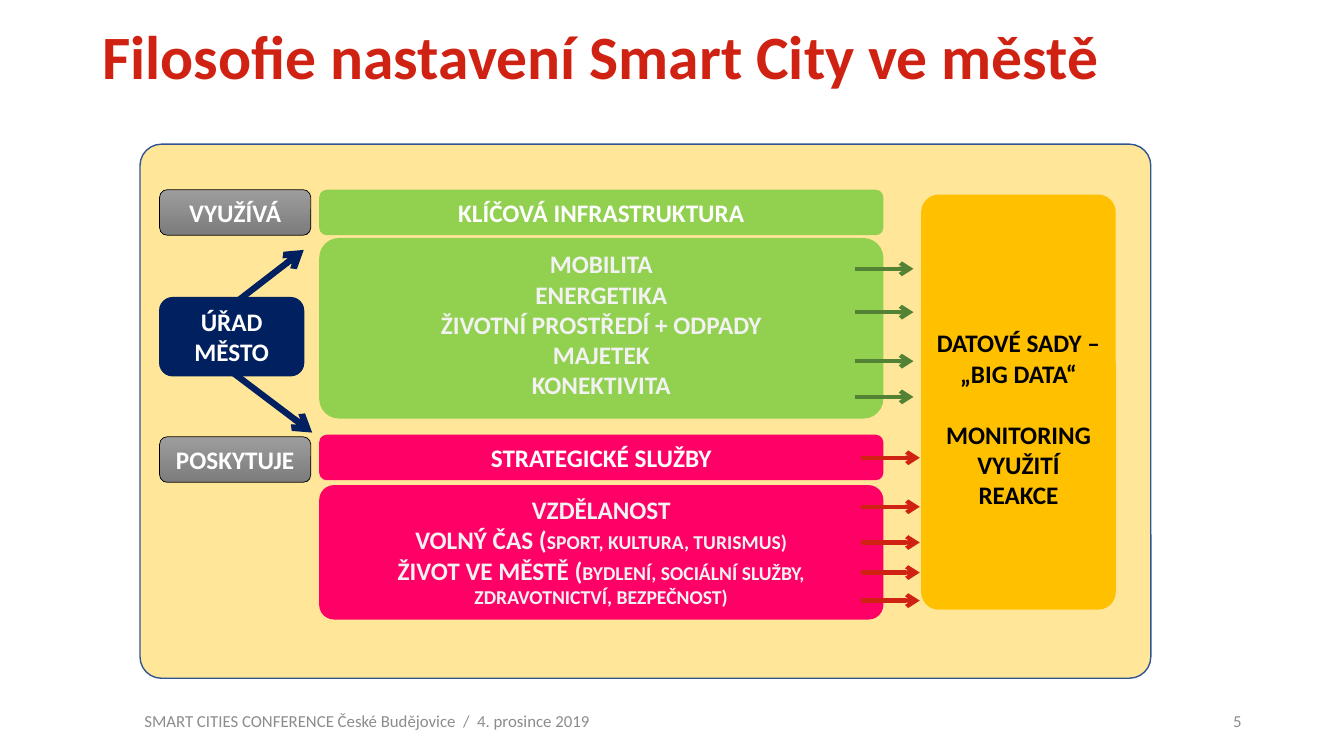
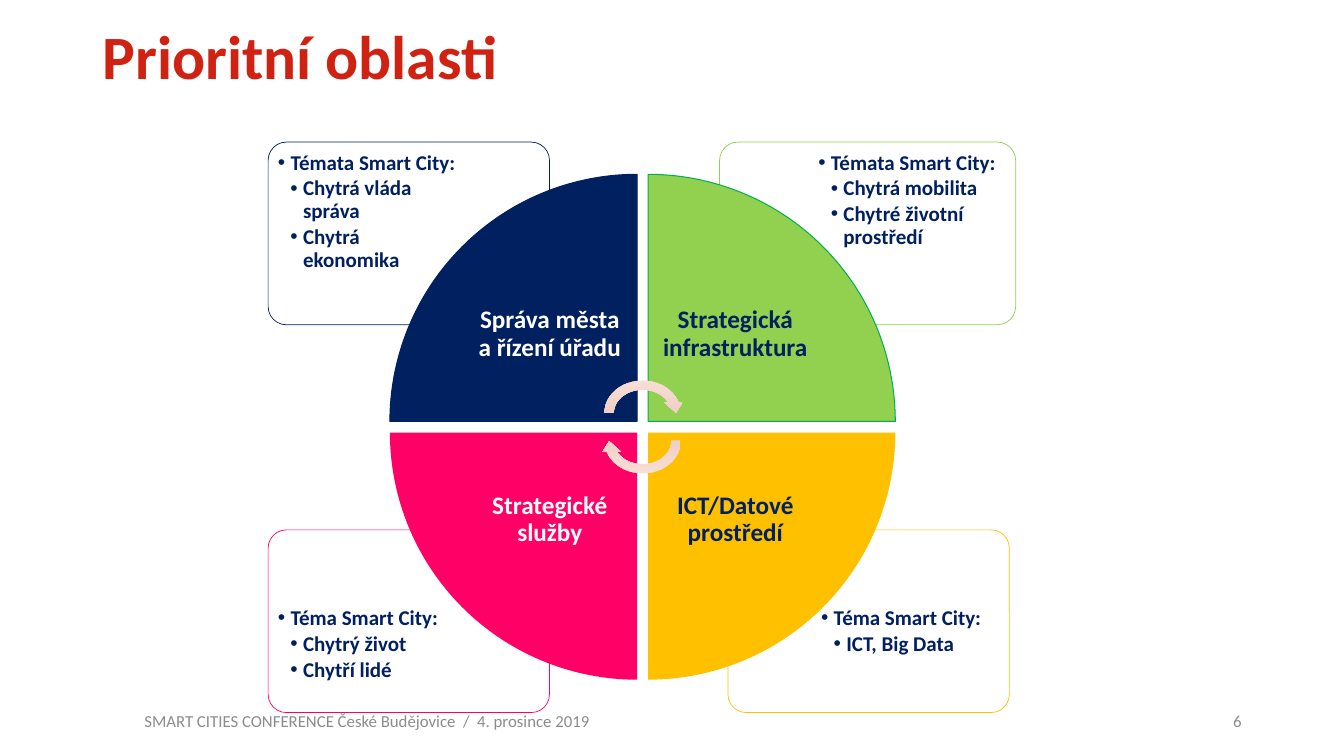
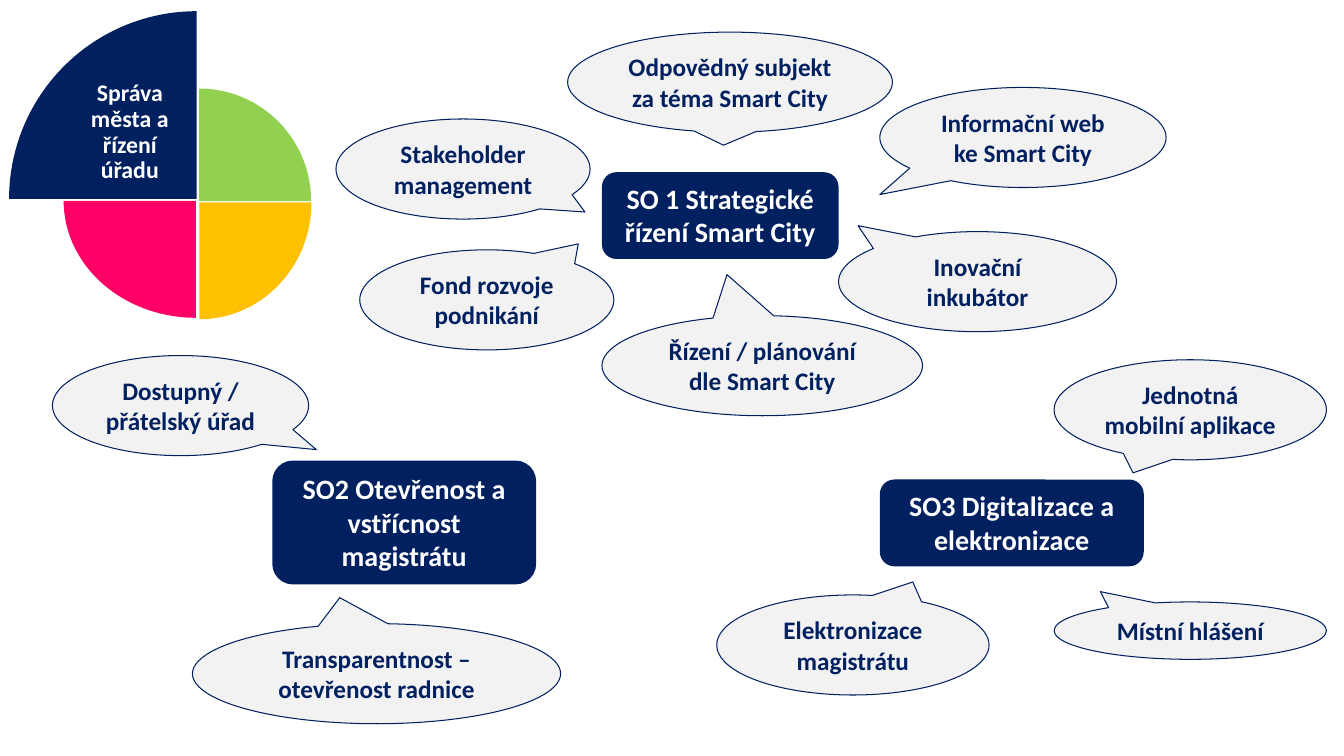
from dataclasses import dataclass
from lxml import etree
from pptx import Presentation
from pptx.dml.color import RGBColor
from pptx.enum.shapes import MSO_CONNECTOR, MSO_SHAPE
from pptx.enum.text import MSO_ANCHOR, MSO_AUTO_SIZE, PP_ALIGN
from pptx.oxml.ns import qn
from pptx.util import Pt

ROUND = MSO_SHAPE.ROUNDED_RECTANGLE
RECT = MSO_SHAPE.RECTANGLE
WEDGE = MSO_SHAPE.PIE_WEDGE
BUBBLE = MSO_SHAPE.OVAL_CALLOUT
CYCLE = MSO_SHAPE.CIRCULAR_ARROW
STRAIGHT = MSO_CONNECTOR.STRAIGHT
LEFT, MID, RIGHT = PP_ALIGN.LEFT, PP_ALIGN.CENTER, PP_ALIGN.RIGHT
TOP, CENTER = MSO_ANCHOR.TOP, MSO_ANCHOR.MIDDLE


@dataclass(frozen=True)
class Theme:
    font: str = "Calibri"
    red: str = "D02213"
    grey: str = "8C8C8C"
    navy: str = "002060"
    green: str = "92D050"
    leaf: str = "00B050"
    moss: str = "548235"
    pink: str = "FF0066"
    gold: str = "FFC000"
    cream: str = "FFE699"
    blue: str = "325491"
    pale: str = "F2F2F2"
    white: str = "FFFFFF"
    black: str = "000000"
    steel: tuple = ("9D9D9D", "7C7C7C")
    peach: tuple = ("FAE0D8", "E2BCB1")
    title: int = 44
    goal: int = 20
    body: int = 18
    label: int = 17
    list: int = 15
    small: int = 14
    foot: int = 12


T = Theme()

FOOTER = "SMART CITIES CONFERENCE České Budějovice  /  4. prosince 2019"

BANDS = [
    (135.5, 32.5, None, T.green, T.white, ["KLÍČOVÁ INFRASTRUKTURA"]),
    (170, 129, 0.11, T.green, T.pale,
     ["MOBILITA", "ENERGETIKA", "ŽIVOTNÍ PROSTŘEDÍ + ODPADY", "MAJETEK", "KONEKTIVITA"]),
    (310.5, 32.5, None, T.pink, T.white, ["STRATEGICKÉ SLUŽBY"]),
    (346.5, 96, 0.11, T.pink, T.pale,
     ["VZDĚLANOST",
      [("VOLNÝ ČAS (", T.body), ("SPORT, KULTURA, TURISMUS)", T.small)],
      [("ŽIVOT VE MĚSTĚ (", T.body),
       ("BYDLENÍ, SOCIÁLNÍ SLUŽBY, ZDRAVOTNICTVÍ, BEZPEČNOST)", T.small)]]),
]
ROLES = [(135.5, "VYUŽÍVÁ"), (312, "POSKYTUJE")]
DATA = ["DATOVÉ SADY – „BIG DATA“", "MONITORING", "VYUŽITÍ", "REAKCE"]
FLOWS = [
    (610.5, T.moss, [192, 223, 258, 283.5]),
    (615, T.red, [327, 362, 387.5, 409, 429]),
]

AREAS = [
    {"name": "Správa města a řízení úřadu", "col": 0, "row": 0, "turn": 0,
     "fill": T.navy, "edge": T.navy, "ink": T.white,
     "panel": (191.5, 201), "list": (194.5, 135.5),
     "head": "Témata Smart City:", "items": ["Chytrá vláda správa", "Chytrá ekonomika"]},
    {"name": "Strategická infrastruktura", "col": 1, "row": 0, "turn": 90,
     "fill": T.green, "edge": T.leaf, "ink": T.navy,
     "panel": (514, 211.5), "list": (580.5, 142.5),
     "head": "Témata Smart City:", "items": ["Chytrá mobilita", "Chytré životní prostředí"]},
    {"name": "Strategické služby", "col": 0, "row": 1, "turn": 270,
     "fill": T.pink, "edge": None, "ink": T.white,
     "panel": (191.5, 201), "list": (194.5, 135.5),
     "head": "Téma Smart City:", "items": ["Chytrý život", "Chytří lidé"]},
    {"name": "ICT/Datové prostředí", "col": 1, "row": 1, "turn": 180,
     "fill": T.gold, "edge": None, "ink": T.navy,
     "panel": (520, 201), "list": (582.5, 135.5),
     "head": "Téma Smart City:", "items": ["ICT, Big Data"]},
]

SLICES = [
    ((6.5, 8, 134, 134), 0, T.navy),
    ((142, 63.5, 80.5, 80), 90, T.green),
    ((142.5, 144.5, 80, 83.5), 180, T.gold),
    ((51, 138, 83.5, 94.5), 270, T.pink),
]
GOALS = [
    ((430, 123, 169, 62), "SO 1 Strategické řízení Smart City"),
    ((194.5, 329, 188.5, 88.5), "SO2 Otevřenost a vstřícnost magistrátu"),
    ((628.5, 342.5, 188.5, 62), "SO3 Digitalizace a elektronizace"),
]
IDEAS = [
    (628.5, 62.5, 204.5, 71.5, -0.5, 0.57, "Informační web ke Smart City"),
    (599, 165.5, 198.5, 71.5, -0.43, -0.56, "Inovační inkubátor"),
    (137.5, 445.5, 263, 71.5, -0.1, -0.76, "Transparentnost – otevřenost radnice"),
    (37.5, 254, 183, 71.5, 0.53, 0.44, "Dostupný / přátelský úřad"),
    (753, 257, 194.5, 71.5, -0.21, 0.63, "Jednotná mobilní aplikace"),
    (753, 430, 194.5, 41, -0.33, -0.68, "Místní hlášení"),
    (405.5, 23, 232, 71.5, -0.02, 0.63, "Odpovědný subjekt za téma Smart City"),
    (240, 85, 181.5, 71.5, 0.48, 0.43, "Stakeholder management"),
    (257, 178.5, 181.5, 71.5, 0.36, -0.56, "Fond rozvoje podnikání"),
    (430, 225.5, 229, 71.5, -0.11, -0.91, "Řízení / plánování dle Smart City"),
    (512, 425, 194.5, 71.5, 0.22, -0.63, "Elektronizace magistrátu"),
]


def rgb(code):
    return RGBColor.from_string(code)


def points(box):
    return [Pt(n) for n in box]


def place(shape, box):
    shape.left, shape.top, shape.width, shape.height = points(box)


def write(shape, paras, size, ink, align=MID, bold=True, anchor=TOP, inset=None, tight=False):
    frame = shape.text_frame
    frame.word_wrap = True
    frame.auto_size = MSO_AUTO_SIZE.NONE
    frame.vertical_anchor = anchor
    if inset is not None:
        frame.margin_left = frame.margin_right = Pt(inset)
        frame.margin_top = frame.margin_bottom = Pt(inset)
    for i, runs in enumerate(paras):
        para = frame.paragraphs[0] if i == 0 else frame.add_paragraph()
        para.alignment = align
        if tight:
            para.line_spacing = 0.9
        for text, pts in [(runs, size)] if isinstance(runs, str) else runs:
            run = para.add_run()
            run.text = text
            font = run.font
            font.name, font.size, font.bold = T.font, Pt(pts), bold
            font.color.rgb = rgb(ink)
    return frame


def draw(slide, kind, box, fill, edge=None, width=0.75, adjust=(), turn=0):
    shape = slide.shapes.add_shape(kind, *points(box))
    shape.shadow.inherit = False
    shape.rotation = turn
    for i, value in enumerate(adjust):
        shape.adjustments[i] = value
    if isinstance(fill, tuple):
        shape.fill.gradient()
        shape.fill.gradient_angle = 270
        for stop, code in zip(shape.fill.gradient_stops, fill):
            stop.color.rgb = rgb(code)
    else:
        shape.fill.solid()
        shape.fill.fore_color.rgb = rgb(fill)
    if edge:
        shape.line.color.rgb = rgb(edge)
        shape.line.width = Pt(width)
    else:
        shape.line.fill.background()
    return shape


def arrow(slide, ends, ink, width):
    line = slide.shapes.add_connector(STRAIGHT, *points(ends))
    line.line.color.rgb = rgb(ink)
    line.line.width = Pt(width)
    props = line._element.spPr
    etree.SubElement(props.find(qn("a:ln")), qn("a:tailEnd"), type="arrow")
    etree.SubElement(props, qn("a:effectLst"))


def label(slide, box, text, **style):
    write(slide.shapes.add_textbox(*points(box)), [text], **style)


def start(deck, layout, title, number):
    slide = deck.slides.add_slide(deck.slide_layouts[layout])
    head = slide.shapes.title
    place(head, (66, -1.5, 749.5, 88.5))
    write(head, [title], T.title, T.red, LEFT, anchor=CENTER, tight=True)
    for left, width, text, align in [(678, 216, number, RIGHT), (96, 522, FOOTER, LEFT)]:
        label(slide, (left, 500, width, 29), text, size=T.foot, ink=T.grey,
              align=align, bold=False, anchor=CENTER)
    return slide


def bullets(para, depth):
    para.level = depth
    para.space_before, para.space_after = Pt(0), Pt(2.25)
    props = para._p.get_or_add_pPr()
    props.set("marL", str(Pt(9 * (depth + 1))))
    props.set("indent", str(Pt(-9)))
    etree.SubElement(props, qn("a:buFont"), typeface="Arial")
    etree.SubElement(props, qn("a:buChar"), char="•")


def city(deck):
    slide = start(deck, 5, "Filosofie nastavení Smart City ve městě", "5")
    draw(slide, ROUND, (100, 103, 722, 381.5), T.cream, T.blue, 1, [0.04])
    for top, high, curve, fill, ink, paras in BANDS:
        band = draw(slide, ROUND, (228, top, 403, high), fill, adjust=[curve] if curve else ())
        write(band, paras, T.body, ink)
    for ends in [(155.5, 226, 217, 178.5), (155.5, 258, 223, 309)]:
        arrow(slide, ends, T.navy, 4.5)
    office = draw(slide, ROUND, (114, 212.5, 103, 56), T.navy, T.navy)
    write(office, ["ÚŘAD", "MĚSTO"], T.body, T.white)
    for top, text in ROLES:
        role = draw(slide, ROUND, (114, top, 108, 32.5), T.steel, T.black, 0.5)
        write(role, [text], T.body, T.white)
    data = draw(slide, ROUND, (658, 139, 139, 296.5), T.gold, adjust=[0.09])
    frame = write(data, DATA, T.body, T.black)
    frame.margin_top = Pt(91.5)
    frame.paragraphs[1].space_before = Pt(22)
    for left, ink, tops in FLOWS:
        for y in tops:
            arrow(slide, (left, y, left + 42, y), ink, 3)


def wheel(deck):
    slide = start(deck, 4, "Prioritní oblasti", "6")
    holders = [h for h in slide.placeholders if h.placeholder_format.idx > 0]
    for area, holder in zip(AREAS, holders):
        row = area["row"]
        left, width = area["panel"]
        panel = draw(slide, ROUND, (left, (101.5, 378.5)[row], width, 130.5),
                     T.white, area["fill"], 0.5, [0.1])
        tint = panel._element.spPr.find(qn("a:solidFill"))[0]
        etree.SubElement(tint, qn("a:alpha"), val="90000")
        left, width = area["list"]
        place(holder, (left, (104.5, 430)[row], width, (92, 76)[row]))
        frame = write(holder, [area["head"], *area["items"]], T.list, T.navy,
                      LEFT, inset=4, tight=True)
        for i, para in enumerate(frame.paragraphs):
            bullets(para, min(i, 1))
        slide.shapes._spTree.append(holder._element)
    side, inner, gap = 176.5, 124.5, 8
    for area in AREAS:
        col, row = area["col"], area["row"]
        x, y = 278.5 + col * (side + gap), 124.5 + row * (side + gap)
        draw(slide, WEDGE, (x, y, side, side), area["fill"], area["edge"], turn=area["turn"])
        box = (x + (1 - col) * (side - inner), y + (1 - row) * (side - inner), inner, inner)
        label(slide, box, area["name"], size=T.body, ink=area["ink"],
              anchor=CENTER, inset=10, tight=True)
    for top, turn in [(268.5, 0), (288.5, 180)]:
        draw(slide, CYCLE, (428.5, top, 61, 53), T.peach, turn=turn)


def goals(deck):
    slide = deck.slides.add_slide(deck.slide_layouts[6])
    for box, turn, fill in SLICES:
        draw(slide, WEDGE, box, fill, turn=turn)
    core = draw(slide, RECT, (45.5, 47.5, 94.5, 94.5), T.navy)
    write(core, [AREAS[0]["name"]], T.label, T.white, anchor=CENTER, inset=7, tight=True)
    for box, text in GOALS:
        write(draw(slide, ROUND, box, T.navy), [text], T.goal, T.white)
    for *box, dx, dy, text in IDEAS:
        idea = draw(slide, BUBBLE, box, T.pale, T.navy, adjust=(dx, dy))
        write(idea, [text], T.body, T.navy)


def main():
    deck = Presentation()
    deck.slide_width, deck.slide_height = Pt(960), Pt(540)
    for build in (city, wheel, goals):
        build(deck)
    deck.save("out.pptx")


if __name__ == "__main__":
    main()
